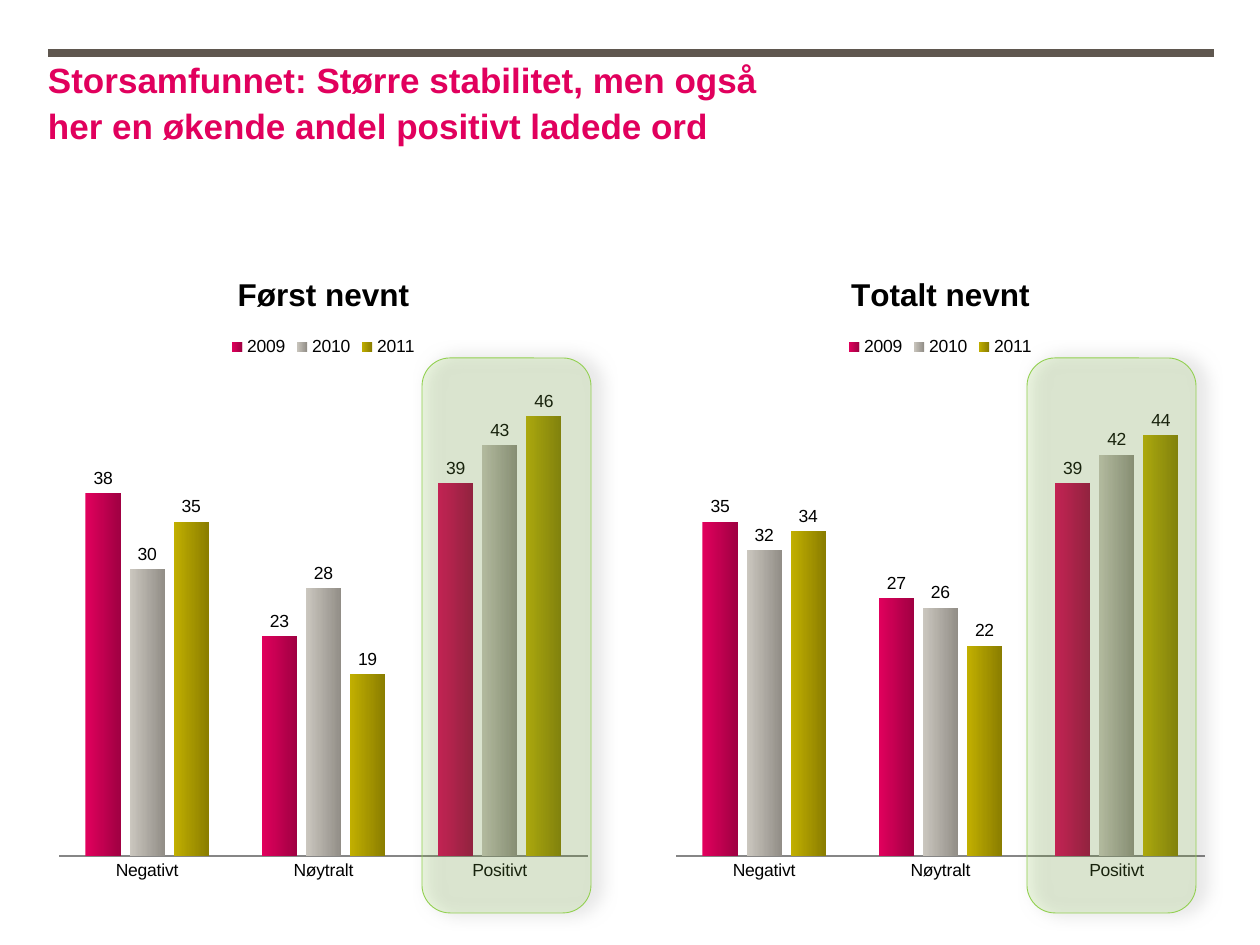
"""Build a slide comparing two clustered column charts of word sentiment, 2009-2011."""
from lxml import etree
from pptx import Presentation
from pptx.chart.data import CategoryChartData
from pptx.dml.color import RGBColor
from pptx.enum.chart import XL_CHART_TYPE, XL_LABEL_POSITION, XL_LEGEND_POSITION, XL_TICK_MARK
from pptx.enum.shapes import MSO_CONNECTOR, MSO_SHAPE
from pptx.oxml import parse_xml
from pptx.oxml.ns import nsdecls, qn
from pptx.util import Emu, Pt

COLUMNS = XL_CHART_TYPE.COLUMN_CLUSTERED
OUTSIDE_END = XL_LABEL_POSITION.OUTSIDE_END
LEGEND_TOP = XL_LEGEND_POSITION.TOP
NO_TICKS = XL_TICK_MARK.NONE
STRAIGHT = MSO_CONNECTOR.STRAIGHT
ROUNDED = MSO_SHAPE.ROUNDED_RECTANGLE
RECT_FONT = "Arial"

COLORS = {
    "rule": "5F574F", "heading": "E1005D", "text": "000000",
    "axis": "868686", "highlight": "92D050",
}
BAR_GRADIENTS = {
    "2009": ("E1005D", "A00042"),
    "2010": ("CBC7BF", "928E87"),
    "2011": ("C2B000", "8A7D00"),
}
CATEGORIES = ["Negativt", "Nøytralt", "Positivt"]
CHARTS = [
    ("Først nevnt", 48, 422, [(38, 23, 39), (30, 28, 43), (35, 19, 46)]),
    ("Totalt nevnt", 665, 1027, [(35, 27, 39), (32, 26, 42), (34, 22, 44)]),
]
CHART_TOP, CHART_WIDTH, CHART_HEIGHT = 249, 551, 646
PLOT_LAYOUT = {"x": 0.02, "y": 0.2, "w": 0.96, "h": 0.74}


def px(length):
    return Emu(round(length * 914400 / 126))


def style_font(font, size, color, bold):
    font.name, font.size, font.bold = RECT_FONT, Pt(size), bold
    font.color.rgb = RGBColor.from_string(color)


prs = Presentation()
prs.slide_width, prs.slide_height = px(1260), px(945)
slide = prs.slides.add_slide(prs.slide_layouts[6])

rule = slide.shapes.add_connector(STRAIGHT, px(48), px(53), px(1214), px(53))
rule.line.width = Pt(4.5)
rule.line.color.rgb = RGBColor.from_string(COLORS["rule"])
etree.SubElement(rule._element.spPr, qn("a:effectLst"))

heading = slide.shapes.add_textbox(px(48), px(54), px(741), px(140)).text_frame
heading.word_wrap = True
heading.margin_left = heading.margin_right = heading.margin_top = heading.margin_bottom = 0
heading.text = "Storsamfunnet: Større stabilitet, men også her en økende andel positivt ladede ord"
heading.paragraphs[0].line_spacing = 1.1
style_font(heading.paragraphs[0].font, 20, COLORS["heading"], True)

for title, left, _, rows in CHARTS:
    data = CategoryChartData()
    data.categories = CATEGORIES
    for year, values in zip(BAR_GRADIENTS, rows):
        data.add_series(year, values)
    chart = slide.shapes.add_chart(
        COLUMNS, px(left), px(CHART_TOP), px(CHART_WIDTH), px(CHART_HEIGHT), data
    ).chart
    style_font(chart.font, 10, COLORS["text"], False)

    chart.has_title = True
    chart.chart_title.text_frame.text = title
    style_font(chart.chart_title.text_frame.paragraphs[0].font, 18, COLORS["text"], True)
    chart.chart_title.include_in_layout = False
    chart.has_legend = True
    chart.legend.position = LEGEND_TOP
    chart.legend.include_in_layout = False

    value_axis = chart.value_axis
    value_axis.minimum_scale, value_axis.maximum_scale = 0, 50
    value_axis.has_major_gridlines = False
    value_axis.visible = False
    category_axis = chart.category_axis
    category_axis.major_tick_mark = category_axis.minor_tick_mark = NO_TICKS
    category_axis.format.line.width = Pt(0.75)
    category_axis.format.line.color.rgb = RGBColor.from_string(COLORS["axis"])

    plot = chart.plots[0]
    plot.gap_width, plot.overlap = 150, -25
    plot.vary_by_categories = False
    for series, shades in zip(plot.series, BAR_GRADIENTS.values()):
        fill = series.format.fill
        fill.gradient()
        fill.gradient_angle = 0
        for stop, shade in zip(fill.gradient_stops, shades):
            stop.color.rgb = RGBColor.from_string(shade)
        series.format.line.fill.background()
        labels = series.data_labels
        labels.show_value = True
        labels.position = OUTSIDE_END

    plot_area = chart._chartSpace.chart.plotArea
    for old_layout in plot_area.findall(qn("c:layout")):
        plot_area.remove(old_layout)
    settings = "".join(f'<c:{key} val="{value}"/>' for key, value in PLOT_LAYOUT.items())
    plot_area.insert(0, parse_xml(
        f'<c:layout {nsdecls("c")}><c:manualLayout><c:layoutTarget val="inner"/>'
        f'<c:xMode val="edge"/><c:yMode val="edge"/>{settings}</c:manualLayout></c:layout>'
    ))

for _, _, left, _ in CHARTS:
    highlight = slide.shapes.add_shape(ROUNDED, px(left), px(358), px(169), px(555))
    highlight.shadow.inherit = False
    highlight.fill.solid()
    highlight.fill.fore_color.rgb = RGBColor.from_string(COLORS["highlight"])
    highlight.line.color.rgb = RGBColor.from_string(COLORS["highlight"])
    highlight.line.width = Pt(0.5)
    properties = highlight._element.spPr
    tint = properties.find(qn("a:solidFill")).find(qn("a:srgbClr"))
    etree.SubElement(tint, qn("a:alpha"), val="17000")
    properties.find(qn("a:effectLst")).append(parse_xml(
        f'<a:outerShdw {nsdecls("a")} blurRad="{Pt(10)}" dist="{Pt(5)}" dir="0" algn="l" '
        f'rotWithShape="0"><a:srgbClr val="{COLORS["text"]}"><a:alpha val="50000"/>'
        '</a:srgbClr></a:outerShdw>'
    ))

prs.save("out.pptx")
